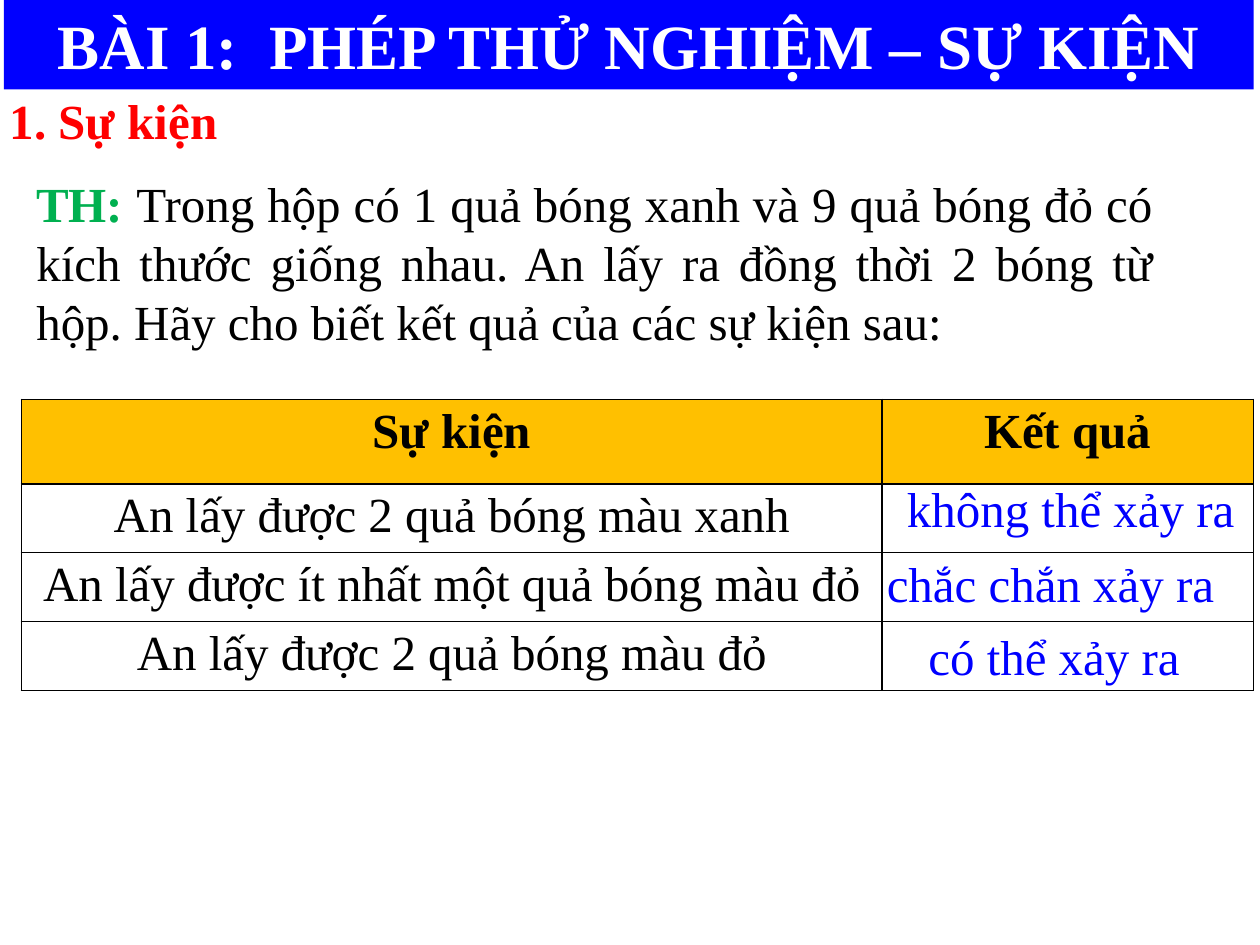
from lxml import etree
from pptx import Presentation
from pptx.dml.color import RGBColor
from pptx.enum import text as t
from pptx.oxml import ns
from pptx.util import Inches, Pt

BLUE = RGBColor(0x00, 0x00, 0xFF)
RED = RGBColor(0xFF, 0x00, 0x00)
GREEN = RGBColor(0x00, 0xB0, 0x50)
GOLD = RGBColor(0xFF, 0xC0, 0x00)
BLACK = RGBColor(0x00, 0x00, 0x00)
WHITE = RGBColor(0xFF, 0xFF, 0xFF)

EVENTS = [
    "An lấy được 2 quả bóng màu xanh",
    "An lấy được ít nhất một quả bóng màu đỏ",
    "An lấy được 2 quả bóng màu đỏ",
]
RESULTS = [
    ("không thể xảy ra", 6.93, 0.58),
    ("chắc chắn xảy ra", 6.77, 1.17),
    ("có thể xảy ra", 7.1, 1.75),
]


def write(para, words, size=28, color=BLACK, bold=False, align=None):
    run = para.add_run()
    run.text = words
    font = run.font
    font.name = "Times New Roman"
    font.size = Pt(size)
    font.bold = bold
    font.color.rgb = color
    if align is not None:
        para.alignment = align


def add_text(slide, x, y, w, h):
    frame = slide.shapes.add_textbox(Inches(x), Inches(y), Inches(w), Inches(h)).text_frame
    frame.word_wrap = True
    return frame.paragraphs[0]


def add_title(slide, x, y, w, h):
    title = slide.shapes.title
    title.left, title.top = Inches(x), Inches(y)
    title.width, title.height = Inches(w), Inches(h)
    title.fill.solid()
    title.fill.fore_color.rgb = BLUE
    frame = title.text_frame
    frame.auto_size = t.MSO_AUTO_SIZE.NONE
    frame.vertical_anchor = t.MSO_ANCHOR.TOP
    write(frame.paragraphs[0], "BÀI 1:  PHÉP THỬ NGHIỆM – SỰ KIỆN",
          size=36, color=WHITE, bold=True, align=t.PP_ALIGN.CENTER)


def add_task(slide, x, y, w, h):
    head = add_text(slide, x, y, 7.17, 0.57)
    write(head, "1. Sự kiện", color=RED, bold=True)
    para = add_text(slide, x + 0.21, y + 0.66, w, h - 0.66)
    write(para, "TH: ", color=GREEN, bold=True, align=t.PP_ALIGN.JUSTIFY)
    write(para, "Trong hộp có 1 quả bóng xanh và 9 quả bóng đỏ có kích thước "
          "giống nhau. An lấy ra đồng thời 2 bóng từ hộp. "
          "Hãy cho biết kết quả của các sự kiện sau:")


def add_edges(cell):
    props = cell._tc.get_or_add_tcPr()
    for i, side in enumerate(("lnL", "lnR", "lnT", "lnB")):
        line = etree.Element(ns.qn("a:" + side), w=str(Pt(1)))
        fill = etree.SubElement(line, ns.qn("a:solidFill"))
        etree.SubElement(fill, ns.qn("a:srgbClr"), val=str(BLACK))
        props.insert(i, line)


def add_grid(slide, x, y, w, h):
    rows = len(EVENTS) + 1
    grid = slide.shapes.add_table(rows, 2, Inches(x), Inches(y), Inches(w), Inches(h)).table
    grid.columns[0].width = Inches(6.83)
    grid.columns[1].width = Inches(w - 6.83)
    for i, row in enumerate(grid.rows):
        row.height = Inches(0.67 if i == 0 else (h - 0.67) / len(EVENTS))
        for cell in row.cells:
            cell.margin_top = cell.margin_bottom = Inches(0.04)
            cell.margin_left = cell.margin_right = Inches(0.08)
            if i == 0:
                cell.fill.solid()
                cell.fill.fore_color.rgb = GOLD
            else:
                cell.fill.background()
            add_edges(cell)
    for j, words in enumerate(("Sự kiện", "Kết quả")):
        write(grid.cell(0, j).text_frame.paragraphs[0], words,
              bold=True, align=t.PP_ALIGN.CENTER)
    for i, words in enumerate(EVENTS, 1):
        write(grid.cell(i, 0).text_frame.paragraphs[0], words, align=t.PP_ALIGN.CENTER)
    for words, dx, dy in RESULTS:
        para = add_text(slide, x + dx, y + dy, 3.4, 0.57)
        write(para, words, color=BLUE, align=t.PP_ALIGN.JUSTIFY)


def main():
    deck = Presentation()
    deck.slide_width, deck.slide_height = Inches(10), Inches(7.5)
    slide = deck.slides.add_slide(deck.slide_layouts[5])
    add_title(slide, 0.03, 0, 9.92, 0.71)
    add_task(slide, -0.02, 0.67, 9.06, 2.17)
    add_grid(slide, 0.17, 3.17, 9.78, 2.26)
    deck.save("out.pptx")


if __name__ == "__main__":
    main()
